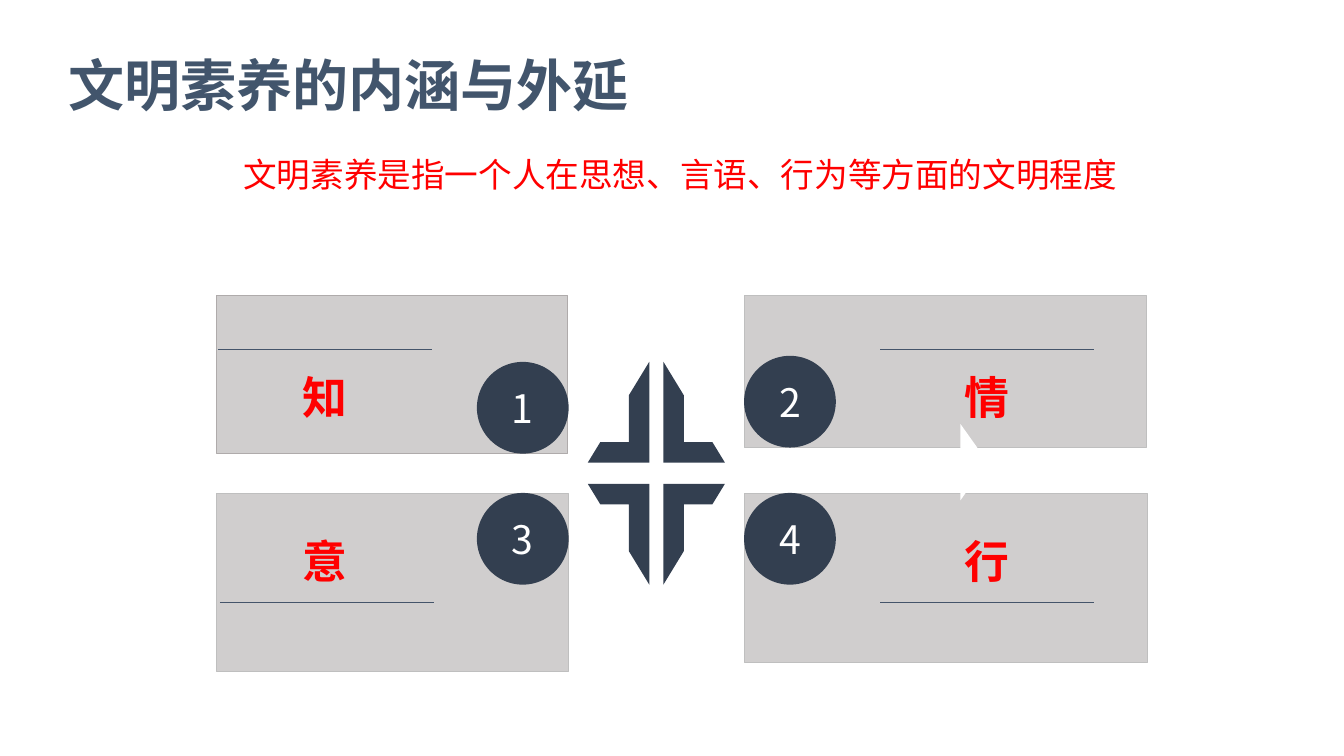
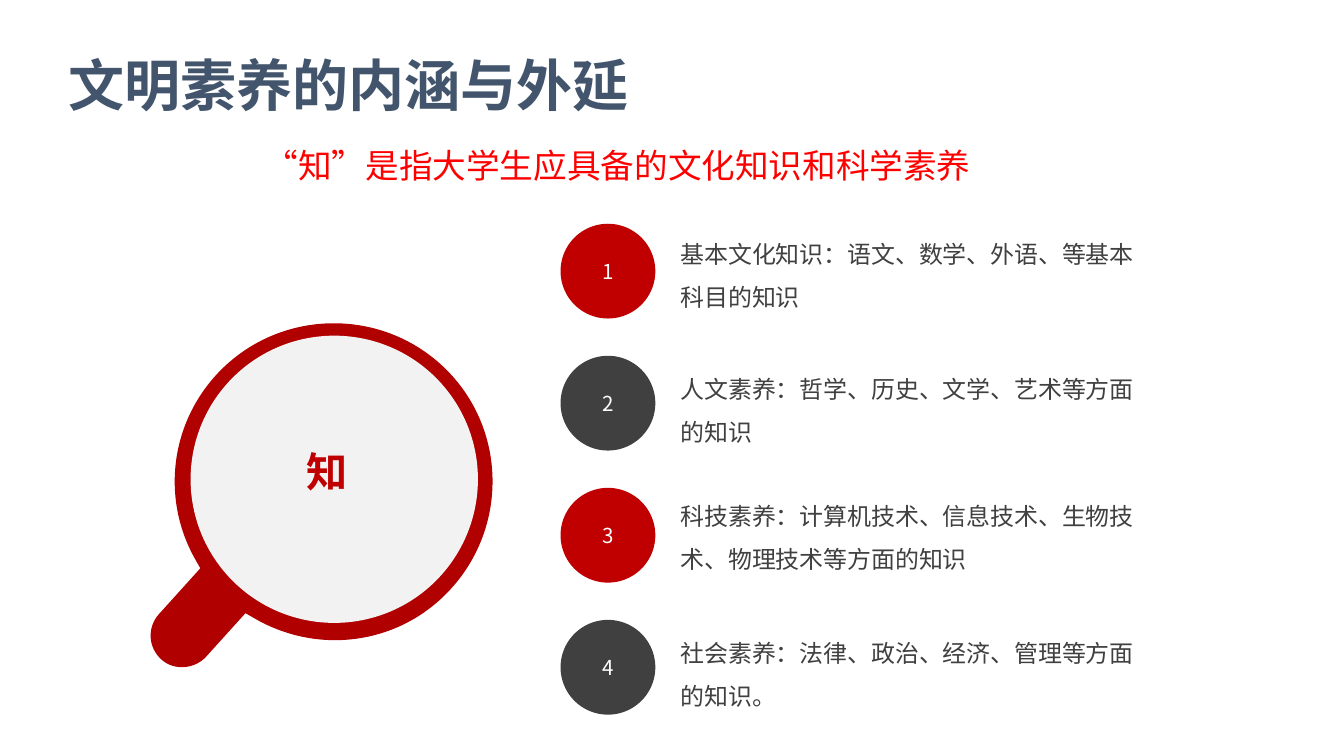
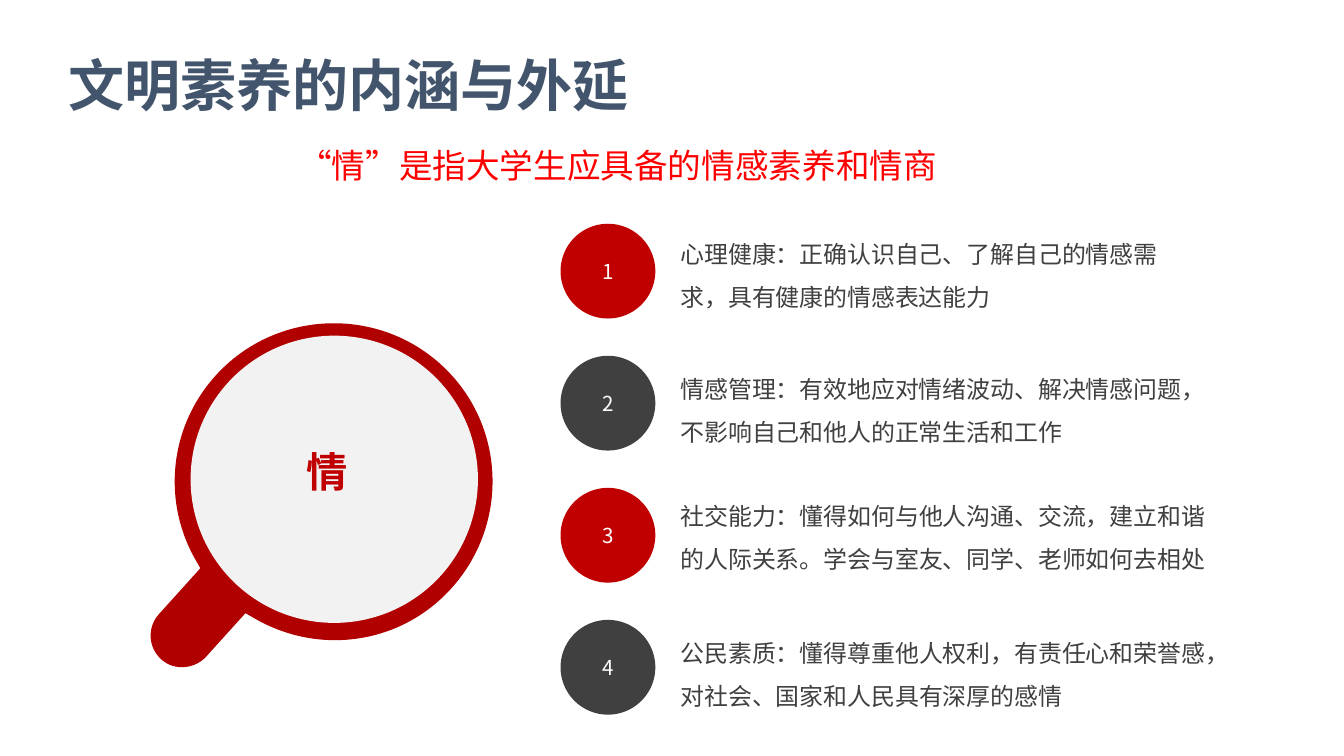
from dataclasses import dataclass
from typing import NamedTuple, Optional

from lxml import etree
from pptx import Presentation
from pptx.dml.color import RGBColor
from pptx.enum import shapes, text
from pptx.oxml.ns import qn
from pptx.util import Emu, Pt

PX = 9144
HEADING = "文明素养的内涵与外延"


@dataclass(frozen=True)
class Theme:
    """Colours, font and type sizes of the deck."""

    font: str = "Noto Sans CJK SC"
    heading: str = "42556C"
    accent: str = "FF0000"
    panel: str = "D0CECE"
    rule: str = "44546A"
    navy: str = "333F50"
    crimson: str = "C00000"
    handle: str = "B00000"
    glass: str = "F2F2F2"
    charcoal: str = "404040"
    white: str = "FFFFFF"
    heading_size: float = 40
    lead_size: float = 24
    keyword_size: float = 32
    digit_size: float = 28
    lens_size: float = 29.4
    marker_size: float = 14.7
    body_size: float = 17.1


THEME = Theme()


class Box(NamedTuple):
    """A rectangle in px."""

    left: int
    top: int
    width: int
    height: int

    def emu(self) -> list[Emu]:
        """Return the four lengths in EMU."""
        return [Emu(side * PX) for side in self]


class Style(NamedTuple):
    """How a piece of text is set."""

    size: float
    color: str
    bold: bool = False
    centred: bool = True
    middle: bool = False
    insets: tuple[int, int, int, int] = (10, 5, 10, 5)
    spacing: Optional[float] = None


NO_INSETS = (0, 0, 0, 0)
TITLE = Style(THEME.heading_size, THEME.heading, True, False, insets=NO_INSETS)
LEAD = Style(THEME.lead_size, THEME.accent)
KEYWORD = Style(THEME.keyword_size, THEME.accent, True, middle=True)
DIGIT = Style(THEME.digit_size, THEME.white, middle=True, insets=NO_INSETS)
LENS = Style(THEME.lens_size, THEME.crimson, True, insets=(13, 7, 13, 7))
MARKER = Style(THEME.marker_size, THEME.white, middle=True, insets=NO_INSETS)
BODY = Style(THEME.body_size, THEME.charcoal, centred=False,
             insets=(0, 14, 19, 10), spacing=1.5)


class Quadrant(NamedTuple):
    """One of the four aspects around the cross."""

    keyword: str
    panel: Box
    border: str
    badge: tuple[int, int]
    label: tuple[int, int]
    rule: tuple[int, int]


class Aspect(NamedTuple):
    """One aspect slide with its four numbered items."""

    keyword: str
    lead: str
    items: list[tuple[str, int]]


class Segment(NamedTuple):
    """A step of an outline, curved when it has two control points."""

    end: tuple[int, int]
    controls: tuple[tuple[int, int], ...] = ()


QUADRANTS = [
    Quadrant("知", Box(215, 293, 348, 157), "AFABAB", (473, 359), (216, 365), (216, 347)),
    Quadrant("情", Box(738, 293, 399, 151), "BFBFBF", (738, 353), (873, 365), (873, 347)),
    Quadrant("意", Box(215, 490, 349, 176), "BFBFBF", (473, 489), (216, 528), (218, 598)),
    Quadrant("行", Box(738, 490, 400, 167), "BFBFBF", (738, 489), (873, 528), (873, 598)),
]

ASPECTS = [
    Aspect("知", "“知”是指大学生应具备的文化知识和科学素养", [
        ("基本文化知识：语文、数学、外语、等基本科目的知识", 481),
        ("人文素养：哲学、历史、文学、艺术等方面的知识", 481),
        ("科技素养：计算机技术、信息技术、生物技术、物理技术等方面的知识", 481),
        ("社会素养：法律、政治、经济、管理等方面的知识。", 481),
    ]),
    Aspect("情", "“情”是指大学生应具备的情感素养和情商", [
        ("心理健康：正确认识自己、了解自己的情感需求，具有健康的情感表达能力", 513),
        ("情感管理：有效地应对情绪波动、解决情感问题，不影响自己和他人的正常生活和工作", 524),
        ("社交能力：懂得如何与他人沟通、交流，建立和谐的人际关系。学会与室友、同学、老师如何去相处", 552),
        ("公民素质：懂得尊重他人权利，有责任心和荣誉感，对社会、国家和人民具有深厚的感情", 552),
    ]),
]

ITEM_TOPS = (209, 343, 469, 605)

LENS_TOP = (158, 0)
MAGNIFIER = [
    Segment((0, 158), ((71, 0), (0, 71))),
    Segment((105, 306), ((0, 225), (42, 284))),
    Segment((117, 310)),
    Segment((117, 371)),
    Segment((149, 403), ((117, 389), (131, 403))),
    Segment((180, 371), ((166, 403), (180, 388))),
    Segment((180, 313)),
    Segment((194, 310)),
    Segment((315, 158), ((265, 293), (315, 231))),
    Segment(LENS_TOP, ((315, 71), (245, 0))),
]


def write(shape, content: str, style: Style) -> None:
    """Put styled text into a shape."""
    frame = shape.text_frame
    frame.word_wrap = True
    (frame.margin_left, frame.margin_top,
     frame.margin_right, frame.margin_bottom) = [Emu(side * PX) for side in style.insets]
    frame.vertical_anchor = text.MSO_ANCHOR.MIDDLE if style.middle else text.MSO_ANCHOR.TOP
    paragraph = frame.paragraphs[0]
    paragraph.text = content
    paragraph.alignment = text.PP_ALIGN.CENTER if style.centred else text.PP_ALIGN.LEFT
    if style.spacing:
        paragraph.line_spacing = style.spacing
    font = paragraph.font
    font.name, font.size, font.bold = THEME.font, Pt(style.size), style.bold
    font.color.rgb = RGBColor.from_string(style.color)
    for properties in shape.element.iter(qn("a:defRPr")):
        etree.SubElement(properties, qn("a:ea"), typeface=THEME.font)


def paint(shape, fill: str, border: Optional[str] = None) -> None:
    """Give a shape a flat fill and an optional thin border."""
    shape.shadow.inherit = False
    shape.fill.solid()
    shape.fill.fore_color.rgb = RGBColor.from_string(fill)
    if border:
        shape.line.color.rgb = RGBColor.from_string(border)
        shape.line.width = Pt(0.75)
    else:
        shape.line.fill.background()


def add_text(slide, box: Box, content: str, style: Style) -> None:
    """Add a text box."""
    write(slide.shapes.add_textbox(*box.emu()), content, style)


def add_figure(slide, kind: shapes.MSO_SHAPE, box: Box, fill: str,
               border: Optional[str] = None):
    """Add a painted preset shape and return it."""
    figure = slide.shapes.add_shape(kind, *box.emu())
    paint(figure, fill, border)
    return figure


def add_disc(slide, box: Box, fill: str, number: int, style: Style) -> None:
    """Add a numbered disc."""
    write(add_figure(slide, shapes.MSO_SHAPE.OVAL, box, fill), str(number), style)


def add_rule(slide, left: int, top: int, width: int) -> None:
    """Add a thin horizontal line."""
    ends = [Emu(value * PX) for value in (left, top, left + width, top)]
    rule = slide.shapes.add_connector(shapes.MSO_CONNECTOR.STRAIGHT, *ends)
    rule.line.color.rgb = RGBColor.from_string(THEME.rule)
    rule.line.width = Pt(0.75)
    etree.SubElement(rule.element.spPr, qn("a:effectLst"))


def add_cross(slide) -> None:
    """Add the four mirrored corner frames in the centre."""
    for top, flip_v in ((480, "0"), (359, "1")):
        for left, flip_h in ((658, "0"), (583, "1")):
            corner = add_figure(slide, shapes.MSO_SHAPE.HALF_FRAME,
                                Box(left, top, 61, 100), THEME.navy)
            placement = corner.element.spPr.get_or_add_xfrm()
            placement.set("flipH", flip_h)
            placement.set("flipV", flip_v)


def add_outline(slide, left: int, top: int, start: tuple[int, int],
                segments: list[Segment]):
    """Add a closed outline of lines and curves and return it."""
    builder = slide.shapes.build_freeform(*start, scale=PX)
    builder.add_line_segments([segment.end for segment in segments], close=True)
    outline = builder.convert_to_shape(Emu(left * PX), Emu(top * PX))
    steps = list(outline.element.iter(qn("a:lnTo")))
    for step, segment in zip(steps, segments):
        if segment.controls:
            curve = etree.Element(qn("a:cubicBezTo"))
            for x, y in (*segment.controls, segment.end):
                etree.SubElement(curve, qn("a:pt"), x=str(x), y=str(y))
            step.getparent().replace(step, curve)
    return outline


def add_magnifier(slide, keyword: str) -> None:
    """Add the tilted magnifying glass with its keyword."""
    frame = add_outline(slide, 144, 309, LENS_TOP, MAGNIFIER)
    frame.rotation = 42.1
    paint(frame, THEME.handle)
    add_figure(slide, shapes.MSO_SHAPE.OVAL, Box(189, 333, 285, 285), THEME.glass)
    add_text(slide, Box(234, 436, 181, 63), keyword, LENS)


def new_slide(deck, lead: str, lead_left: int, lead_top: int):
    """Add a slide with the shared heading and a lead line."""
    slide = deck.slides.add_slide(deck.slide_layouts[6])
    add_text(slide, Box(68, 50, 1165, 67), HEADING, TITLE)
    add_text(slide, Box(lead_left, lead_top, 1191, 69), lead, LEAD)
    return slide


def build_overview(deck) -> None:
    """Build the slide of the four aspects."""
    slide = new_slide(deck, "文明素养是指一个人在思想、言语、行为等方面的文明程度", 79, 148)
    for number, part in enumerate(QUADRANTS, 1):
        add_figure(slide, shapes.MSO_SHAPE.RECTANGLE, part.panel, THEME.panel, part.border)
        add_disc(slide, Box(*part.badge, 91, 91), THEME.navy, number, DIGIT)
        add_text(slide, Box(*part.label, 212, 56), part.keyword, KEYWORD)
        add_rule(slide, *part.rule, 212)
    notch = add_figure(slide, shapes.MSO_SHAPE.ISOSCELES_TRIANGLE,
                       Box(928, 445, 76, 27), THEME.white)
    notch.rotation = 90
    add_cross(slide)


def build_aspect(deck, aspect: Aspect) -> None:
    """Build the slide of one aspect."""
    slide = new_slide(deck, aspect.lead, 17, 139)
    add_magnifier(slide, aspect.keyword)
    for row, ((content, width), top) in enumerate(zip(aspect.items, ITEM_TOPS)):
        fill = THEME.charcoal if row % 2 else THEME.crimson
        add_disc(slide, Box(556, 222 + 131 * row, 94, 94), fill, row + 1, MARKER)
        add_text(slide, Box(675, top, width, 115), content, BODY)


def main() -> None:
    """Build and save the deck."""
    deck = Presentation()
    deck.slide_width, deck.slide_height = Emu(1333 * PX), Emu(750 * PX)
    build_overview(deck)
    for aspect in ASPECTS:
        build_aspect(deck, aspect)
    deck.save("out.pptx")


if __name__ == "__main__":
    main()
